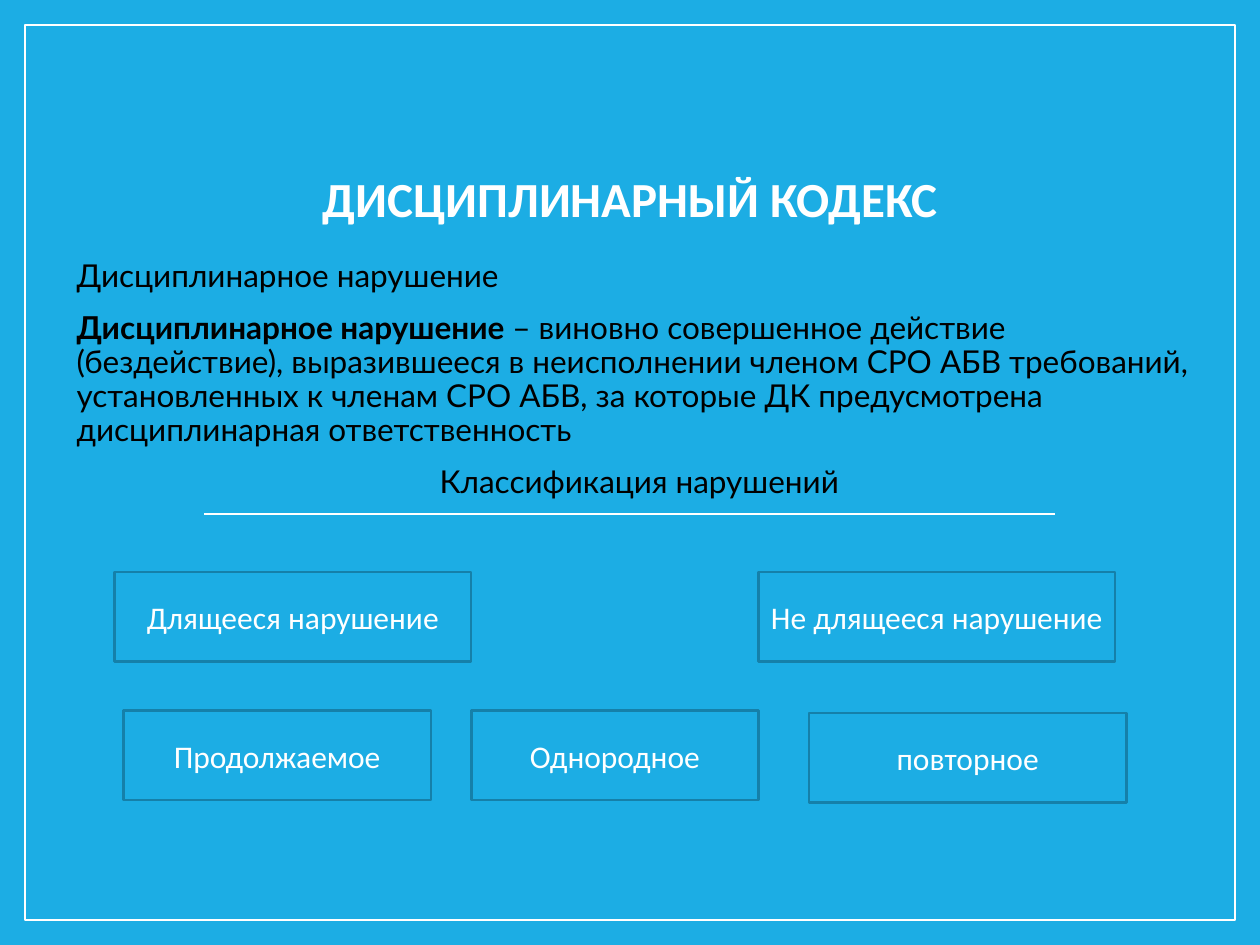
import dataclasses

import lxml.etree
import pptx
import pptx.dml.color
import pptx.enum.shapes
import pptx.enum.text
import pptx.oxml.ns
import pptx.util

Inches = pptx.util.Inches
Pt = pptx.util.Pt
ALIGN = pptx.enum.text.PP_ALIGN
ANCHOR = pptx.enum.text.MSO_ANCHOR
RECTANGLE = pptx.enum.shapes.MSO_SHAPE.RECTANGLE


@dataclasses.dataclass(frozen=True)
class Theme:
    blue: str = "1CADE4"
    outline: str = "1580A9"
    light: str = "FFFFFF"
    dark: str = "000000"
    heading_font: str = "Calibri"
    body_font: str = "Lato"
    title_size: float = 28
    text_size: float = 18


THEME = Theme()


def rgb(value):
    return pptx.dml.color.RGBColor.from_string(value)


def set_values(target, values):
    for name, value in values.items():
        setattr(target, name, value)


def add_run(paragraph, text, font, size, color, bold=False):
    run = paragraph.add_run()
    run.text = text
    set_values(run.font, {"name": font, "size": Pt(size), "bold": bold})
    run.font.color.rgb = rgb(color)


def add_rectangle(slide, box, line_color, line_width):
    shape = slide.shapes.add_shape(RECTANGLE, *map(Inches, box))
    shape.shadow.inherit = False
    shape.fill.solid()
    shape.fill.fore_color.rgb = rgb(THEME.blue)
    shape.line.color.rgb = rgb(line_color)
    shape.line.width = Pt(line_width)
    return shape


def add_divider(slide, left, right, top):
    line = slide.shapes.add_connector(
        pptx.enum.shapes.MSO_CONNECTOR.STRAIGHT,
        Inches(left), Inches(top), Inches(right), Inches(top))
    line.line.color.rgb = rgb(THEME.light)
    line.line.width = Pt(0.79)
    lxml.etree.SubElement(line.element.spPr, pptx.oxml.ns.qn("a:effectLst"))


def place_title(slide, box, text):
    """Fill the title placeholder and bring it in front of the frame."""
    title = slide.shapes.title
    title.element.getparent().append(title.element)
    set_values(title, dict(zip(("left", "top", "width", "height"), map(Inches, box))))
    set_values(title.text_frame, {
        "word_wrap": True,
        "vertical_anchor": ANCHOR.BOTTOM,
        "auto_size": pptx.enum.text.MSO_AUTO_SIZE.NONE,
    })
    paragraph = title.text_frame.paragraphs[0]
    set_values(paragraph, {"alignment": ALIGN.CENTER, "line_spacing": 0.85})
    add_run(paragraph, text, THEME.heading_font, THEME.title_size, THEME.light, True)


def add_definition(slide, box, paragraphs):
    """Each paragraph is an alignment and a list of (text, bold) runs."""
    frame = slide.shapes.add_textbox(*map(Inches, box)).text_frame
    frame.word_wrap = True
    for index, (alignment, runs) in enumerate(paragraphs):
        paragraph = frame.add_paragraph() if index else frame.paragraphs[0]
        set_values(paragraph, {
            "alignment": alignment, "line_spacing": 0.9, "space_before": Pt(10)})
        for text, bold in runs:
            add_run(paragraph, text, THEME.body_font, THEME.text_size, THEME.dark, bold)


def add_violation(slide, box, text):
    shape = add_rectangle(slide, box, THEME.outline, 1.5)
    set_values(shape.text_frame, {"word_wrap": True, "vertical_anchor": ANCHOR.MIDDLE})
    paragraph = shape.text_frame.paragraphs[0]
    paragraph.alignment = ALIGN.CENTER
    add_run(paragraph, text, THEME.heading_font, THEME.text_size, THEME.light)


def build_slide(presentation):
    slide = presentation.slides.add_slide(presentation.slide_layouts[5])
    slide.background.fill.solid()
    slide.background.fill.fore_color.rgb = rgb(THEME.blue)

    add_rectangle(slide, (0.2, 0.2, 9.6, 7.1), THEME.light, 1)
    add_divider(slide, 1.62, 8.37, 4.08)
    place_title(slide, (0.75, 0.6, 8.5, 1.26), "ДИСЦИПЛИНАРНЫЙ КОДЕКС")
    add_definition(slide, (0.51, 2.02, 9.13, 5.12), [
        (ALIGN.LEFT, [("Дисциплинарное нарушение", False)]),
        (ALIGN.LEFT, [
            ("Дисциплинарное нарушение ", True),
            ("– виновно совершенное действие (бездействие), выразившееся в "
             "неисполнении членом СРО АБВ требований, установленных к членам "
             "СРО АБВ, за которые ДК предусмотрена дисциплинарная "
             "ответственность", False),
        ]),
        (ALIGN.CENTER, [("Классификация нарушений", False)]),
    ])

    violations = [
        (0.91, 4.54, 2.83, "Длящееся нарушение"),
        (6.02, 4.54, 2.83, "Не длящееся нарушение"),
        (0.98, 5.64, 2.44, "Продолжаемое"),
        (3.74, 5.64, 2.28, "Однородное"),
        (6.42, 5.66, 2.52, "повторное"),
    ]
    for left, top, width, text in violations:
        add_violation(slide, (left, top, width, 0.71), text)


def main():
    presentation = pptx.Presentation()
    set_values(presentation, {"slide_width": Inches(10), "slide_height": Inches(7.5)})
    build_slide(presentation)
    presentation.save("out.pptx")


if __name__ == "__main__":
    main()
